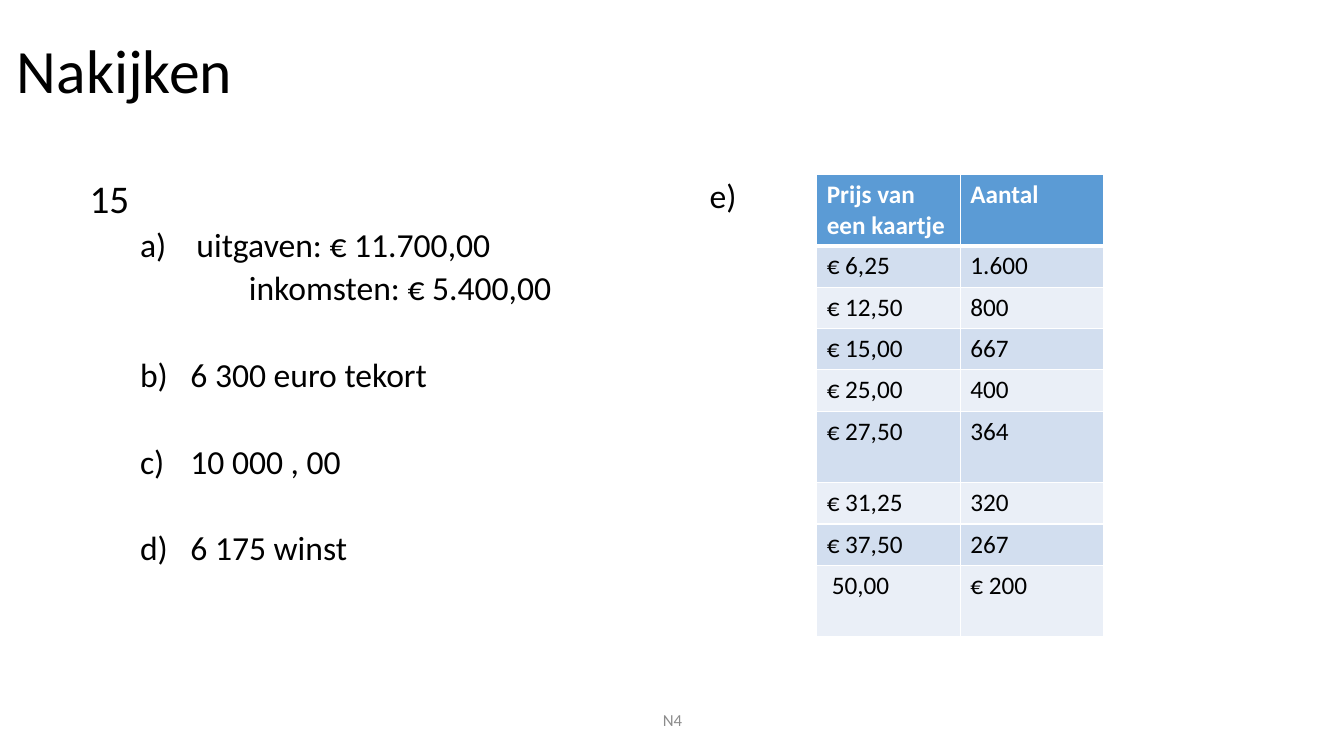
from lxml import etree
from pptx import Presentation
from pptx.dml.color import RGBColor
from pptx.enum import text as t
from pptx.oxml import ns
from pptx.util import Inches, Pt

BLACK = RGBColor(0x00, 0x00, 0x00)
WHITE = RGBColor(0xFF, 0xFF, 0xFF)
GREY = RGBColor(0x8C, 0x8C, 0x8C)
HEADER_BLUE = RGBColor(0x5B, 0x9B, 0xD5)
BAND_DARK = RGBColor(0xD2, 0xDE, 0xEF)
BAND_LIGHT = RGBColor(0xEA, 0xEF, 0xF7)

ANSWERS = [
    ("uitgaven: € 11.700,00", 1.06, -0.56, 5, 1),
    ("inkomsten: € 5.400,00", 1.58, 0, 5, None),
    ("6 300 euro tekort", 1, -0.5, 36, 2),
    ("10 000 , 00", 1, -0.5, 36, 2),
    ("6 175 winst", 1, -0.5, 36, 2),
]
TICKETS = [
    ("Prijs van een kaartje", "Aantal"),
    ("€ 6,25", "1.600"),
    ("€ 12,50", "800"),
    ("€ 15,00", "667"),
    ("€ 25,00", "400"),
    ("€ 27,50", "364"),
    ("€ 31,25", "320"),
    ("€ 37,50", "267"),
    ("50,00", "€ 200"),
]
ROW_HEIGHT, TALL_ROW = 0.41, 0.71
TALL_ROWS = (0, 5, 8)


def set_font(para, size, color=BLACK, bold=False):
    para.font.name = "Calibri"
    para.font.size = Pt(size)
    para.font.color.rgb = color
    para.font.bold = bold


def add_frame(page, left, top, width, height, anchor=t.MSO_ANCHOR.TOP):
    box = page.shapes.add_textbox(Inches(left), Inches(top), Inches(width), Inches(height))
    frame = box.text_frame
    frame.word_wrap = True
    frame.vertical_anchor = anchor
    return frame


def add_line(page, box, words, size, color=BLACK, anchor=t.MSO_ANCHOR.TOP, align=t.PP_ALIGN.LEFT):
    para = add_frame(page, *box, anchor).paragraphs[0]
    para.text = words
    para.alignment = align
    para.line_spacing = 0.9
    set_font(para, size, color)


def add_answers(page, box):
    frame = add_frame(page, *box)
    heading = frame.paragraphs[0]
    heading.text = "15"
    heading.line_spacing = 0.9
    set_font(heading, 28)
    for words, margin, indent, before, start in ANSWERS:
        para = frame.add_paragraph()
        para.text = words
        para.line_spacing = 0.9
        para.space_before = Pt(before)
        layout = para._p.get_or_add_pPr()
        layout.set("marL", str(Inches(margin)))
        layout.set("indent", str(Inches(indent)))
        if start:
            number = etree.SubElement(layout, ns.qn("a:buAutoNum"), type="alphaLcParenR")
            if start > 1:
                number.set("startAt", str(start))
        set_font(para, 24)


def add_borders(cell, widths):
    props = cell._tc.get_or_add_tcPr()
    for side, width in widths.items():
        line = etree.SubElement(props, ns.qn("a:ln" + side), w=str(Pt(width)))
        fill = etree.SubElement(line, ns.qn("a:solidFill"))
        etree.SubElement(fill, ns.qn("a:srgbClr"), val=str(WHITE))


def add_tickets(page, left, top, width):
    heights = [TALL_ROW if row in TALL_ROWS else ROW_HEIGHT for row in range(len(TICKETS))]
    table = page.shapes.add_table(
        len(TICKETS), 2, Inches(left), Inches(top), Inches(width), Inches(sum(heights))
    ).table
    for column in table.columns:
        column.width = Inches(width / 2)
    for row, values in enumerate(TICKETS):
        table.rows[row].height = Inches(heights[row])
        header = row == 0
        band = HEADER_BLUE if header else BAND_DARK if row % 2 else BAND_LIGHT
        for column, words in enumerate(values):
            cell = table.cell(row, column)
            add_borders(cell, {"L": 1, "R": 1, "T": 3 if row == 1 else 1, "B": 3 if header else 1})
            cell.fill.solid()
            cell.fill.fore_color.rgb = band
            cell.text = words
            set_font(cell.text_frame.paragraphs[0], 18, WHITE if header else BLACK, header)
    table.cell(len(TICKETS) - 1, 0).margin_left = Inches(0.15)


def build_review(page):
    middle = t.MSO_ANCHOR.MIDDLE
    add_line(page, (0.07, 0, 11.5, 1.45), "Nakijken", 44, anchor=middle)
    add_answers(page, (0.79, 1.73, 5.85, 4.76))
    add_line(page, (6.94, 1.73, 0.8, 0.5), "e)", 24)
    add_tickets(page, 8.1, 1.73, 2.85)
    add_line(page, (4.42, 6.95, 4.5, 0.4), "N4", 12, GREY, middle, t.PP_ALIGN.CENTER)


def main():
    deck = Presentation()
    deck.slide_width = Inches(13.33)
    deck.slide_height = Inches(7.5)
    build_review(deck.slides.add_slide(deck.slide_layouts[6]))
    deck.save("out.pptx")


if __name__ == "__main__":
    main()
